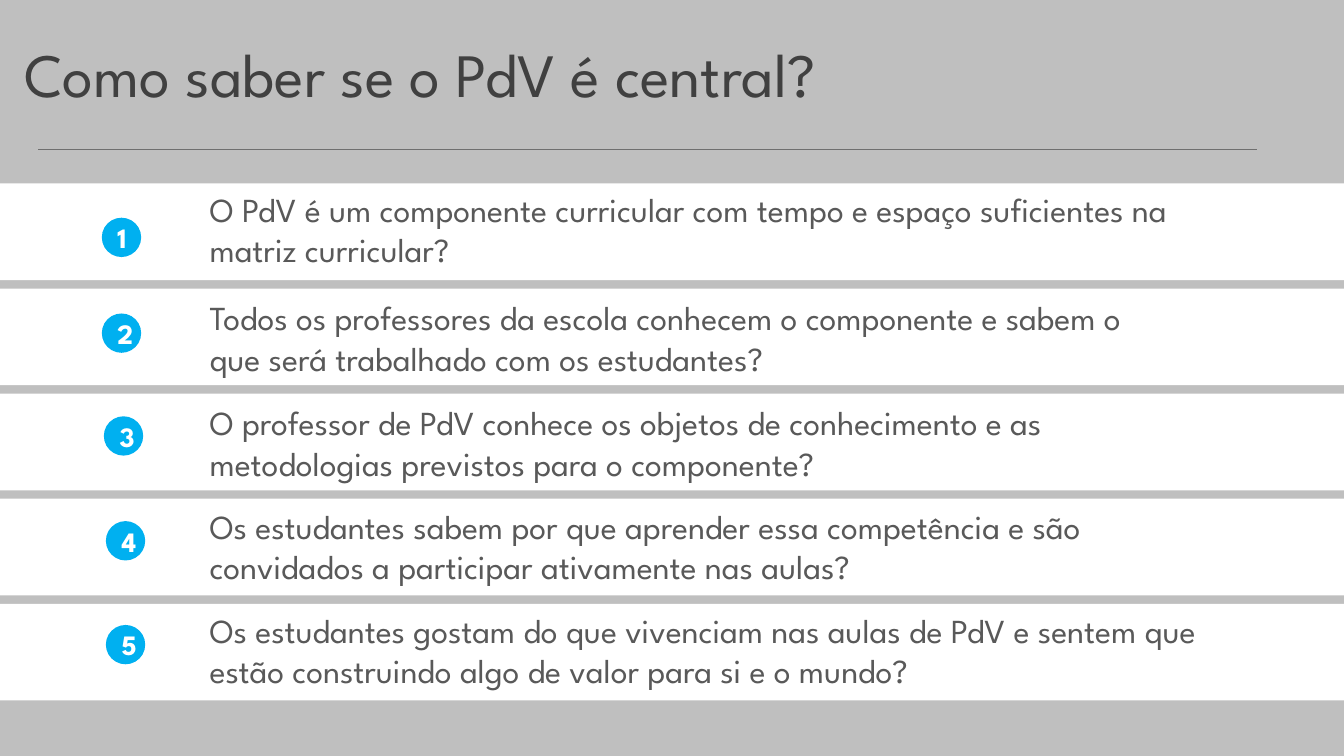
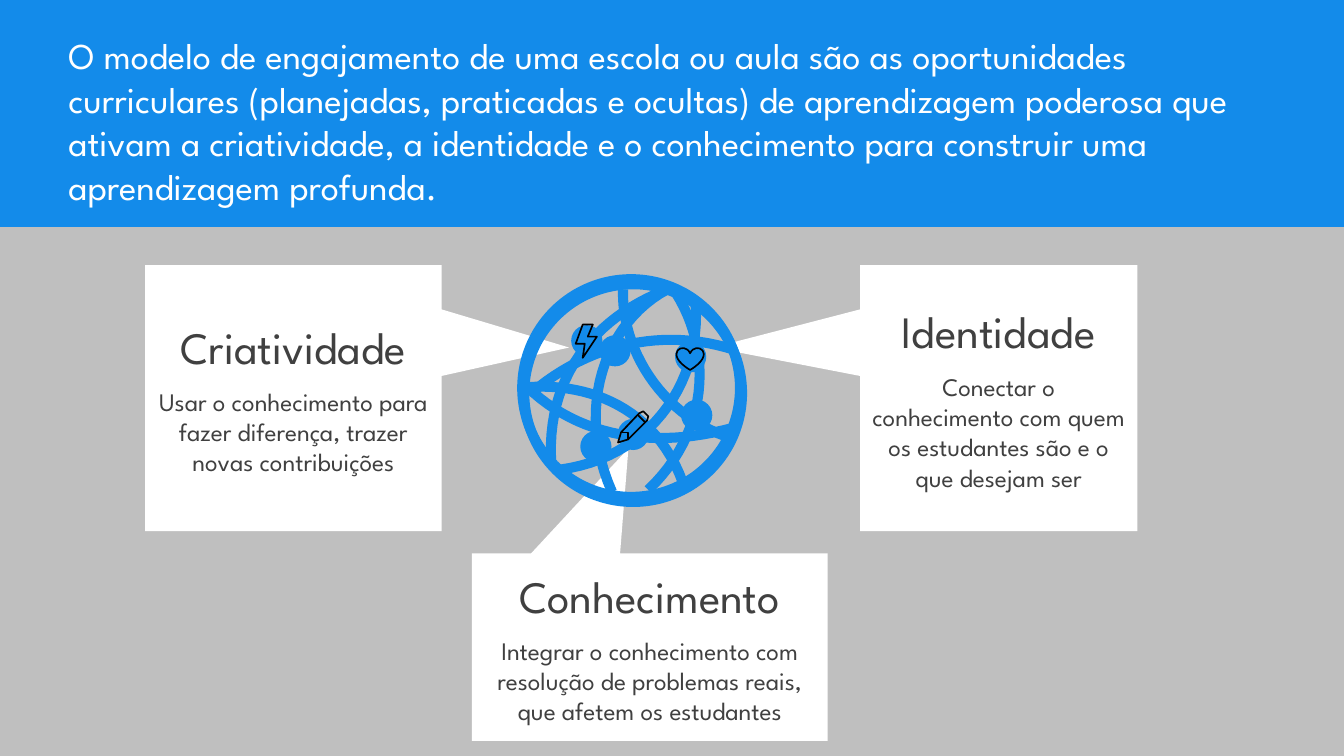
from dataclasses import dataclass

from pptx import Presentation
from pptx.dml.color import RGBColor
from pptx.enum.shapes import MSO_CONNECTOR, MSO_SHAPE
from pptx.enum.text import MSO_ANCHOR, PP_ALIGN
from pptx.oxml.ns import qn
from pptx.util import Inches, Pt
from lxml import etree

RECT, OVAL, HEART = MSO_SHAPE.RECTANGLE, MSO_SHAPE.OVAL, MSO_SHAPE.HEART
CALLOUT = MSO_SHAPE.RECTANGULAR_CALLOUT
STRAIGHT = MSO_CONNECTOR.STRAIGHT
MIDDLE, TOP = MSO_ANCHOR.MIDDLE, MSO_ANCHOR.TOP
CENTER, LEFT = PP_ALIGN.CENTER, PP_ALIGN.LEFT


@dataclass(frozen=True)
class Theme:
    font: str = "League Spartan"
    backdrop: str = "BFBFBF"
    panel: str = "FFFFFF"
    accent: str = "138BEA"
    badge: str = "00B0F0"
    rule: str = "6F6F6F"
    heading: str = "404040"
    body: str = "595959"
    icon: str = "000000"
    title_size: int = 44
    callout_title_size: int = 32
    statement_size: int = 26
    question_size: int = 24
    badge_size: int = 20
    callout_body_size: int = 18
    callout_gap: float = 9.5
    globe_line: float = 7.2
    icon_line: float = 1.2


THEME = Theme()
SLIDE_WIDTH, SLIDE_HEIGHT = 13.33, 7.5

# Question, text box (top, width), badge (left, top)
QUESTIONS = [
    ("O PdV é um componente curricular com tempo e espaço suficientes na "
     "matriz curricular?", (1.82, 9.75), (1.01, 2.16)),
    ("Todos os professores da escola conhecem o componente e sabem o que "
     "será trabalhado com os estudantes?", (2.9, 9.75), (1.01, 3.11)),
    ("O professor de PdV conhece os objetos de conhecimento e as "
     "metodologias previstos para o componente?", (3.94, 9.75), (1.03, 4.13)),
    ("Os estudantes sabem por que aprender essa competência e são "
     "convidados a participar ativamente nas aulas?", (4.97, 9.93), (1.05, 5.17)),
    ("Os estudantes gostam do que vivenciam nas aulas de PdV e sentem que "
     "estão construindo algo de valor para si e o mundo?",
     (6, 10.71), (1.05, 6.2)),
]

STATEMENT = (
    "O modelo de engajamento de uma escola ou aula são as oportunidades "
    "curriculares (planejadas, praticadas e ocultas) de aprendizagem poderosa "
    "que ativam a criatividade, a identidade e o conhecimento para construir "
    "uma aprendizagem profunda.")

# Heading, explanation, box, pointer tip
DIMENSIONS = [
    ("Identidade", "Conectar o conhecimento com quem os estudantes são e o "
     "que desejam ser", (8.53, 2.63, 2.75, 2.64), (-1.03, -0.19)),
    ("Criatividade", "Usar o conhecimento para fazer diferença, trazer novas "
     "contribuições", (1.44, 2.63, 2.94, 2.64), (0.93, -0.19)),
    ("Conhecimento", "Integrar o conhecimento com resolução de problemas "
     "reais, que afetem os estudantes", (4.68, 5.49, 3.53, 1.86), (-0.06, -1.06)),
]

# Globe parts, in inches from the globe's top left corner
GLOBE_RINGS = [(0, 0), (0.02, 0.05)]
GLOBE_DIAMETER, RING_WIDTH, NODE_DIAMETER = 2.26, 0.1, 0.31
GLOBE_ARCS = [
    [(1.05, 0.15), (1.03, 0.73), (1.42, 1.38), (2.07, 1.61)],
    [(1.47, 0.16), (0.77, 0.43), (0.27, 1.03), (0.34, 1.9)],
    [(0.09, 1.11), (0.62, 1.63), (1.37, 1.73), (2.12, 1.53)],
    [(1.77, 0.31), (1.82, 1.13), (1.27, 1.83), (0.42, 1.94)],
    [(0.94, 2.16), (0.57, 1.33), (0.87, 0.48), (1.49, 0.15)],
    [(1.57, 0.18), (1.95, 0.78), (1.89, 1.58), (1.3, 2.14)],
    [(0.12, 1.12), (0.72, 1.08), (1.37, 1.33), (1.64, 2.06)],
    [(0.14, 1.18), (0.72, 0.68), (1.47, 0.53), (2.15, 0.75)],
]
GLOBE_NODES = [(0.69, 0.66), (1.72, 0.82), (1.15, 1.59),
               (0.97, 0.76), (0.78, 1.71), (1.78, 1.4)]
HEART_BOX = (1.58, 0.73, 0.27, 0.22)
BOLT = [(0.65, 0.5), (0.75, 0.5), (0.7, 0.62), (0.79, 0.62),
        (0.65, 0.83), (0.67, 0.69), (0.58, 0.69)]
PENCIL = [(1, 1.67), (1.03, 1.57), (1.21, 1.38), (1.25, 1.36),
          (1.3, 1.41), (1.29, 1.45), (1.1, 1.64)]
PENCIL_DETAILS = [[(1.2, 1.4), (1.27, 1.47)],
                  [(1.03, 1.57), (1.1, 1.57), (1.1, 1.64)]]


def paint(shape, fill=None, line=None, width=1.0):
    shape.shadow.inherit = False
    if fill:
        shape.fill.solid()
        shape.fill.fore_color.rgb = RGBColor.from_string(fill)
    else:
        shape.fill.background()
    if line:
        shape.line.color.rgb = RGBColor.from_string(line)
        shape.line.width = Pt(width)
    else:
        shape.line.fill.background()


def add_figure(slide, preset, box, **colours):
    figure = slide.shapes.add_shape(preset, *map(Inches, box))
    paint(figure, **colours)
    return figure


def add_path(slide, origin, points, closed=False, **colours):
    """Draw points, given in inches from origin, as one outline."""
    start, *others = [(Inches(origin[0] + x), Inches(origin[1] + y))
                      for x, y in points]
    builder = slide.shapes.build_freeform(*start)
    builder.add_line_segments(others, close=closed)
    paint(builder.convert_to_shape(), **colours)


def write(shape, lines, anchor=TOP, align=LEFT, gap=0):
    """Fill a shape with (text, size, colour, bold) lines, gap points apart."""
    frame = shape.text_frame
    for name, value in {"word_wrap": True, "vertical_anchor": anchor}.items():
        setattr(frame, name, value)
    for index, (text, size, colour, bold) in enumerate(lines):
        paragraph = frame.add_paragraph() if index else frame.paragraphs[0]
        paragraph.alignment = align
        if index:
            paragraph.space_before = Pt(gap)
        run = paragraph.add_run()
        run.text = text
        font_format = {"name": THEME.font, "size": Pt(size), "bold": bold}
        for name, value in font_format.items():
            setattr(run.font, name, value)
        run.font.color.rgb = RGBColor.from_string(colour)


def add_text(slide, box, text, size, colour):
    write(slide.shapes.add_textbox(*map(Inches, box)),
          [(text, size, colour, False)])


def add_rule(slide, left, right, top):
    rule = slide.shapes.add_connector(
        STRAIGHT, *map(Inches, (left, top, right, top)))
    rule.line.color.rgb = RGBColor.from_string(THEME.rule)
    rule.line.width = Pt(0.75)
    etree.SubElement(rule._element.spPr, qn("a:effectLst"))


def add_slide(deck):
    slide = deck.slides.add_slide(deck.slide_layouts[6])
    slide.background.fill.solid()
    slide.background.fill.fore_color.rgb = RGBColor.from_string(THEME.backdrop)
    return slide


def add_question(slide, band, number, question, text_place, badge_place):
    add_figure(slide, RECT, band, fill=THEME.panel)
    text_top, text_width = text_place
    add_text(slide, (band[0] + 1.98, text_top, text_width, 0.91), question,
             THEME.question_size, THEME.body)
    badge = add_figure(slide, OVAL, (*badge_place, 0.39, 0.39), fill=THEME.badge)
    write(badge, [(str(number), THEME.badge_size, THEME.panel, True)],
          MIDDLE, CENTER)


def build_questions(deck):
    slide = add_slide(deck)
    add_text(slide, (0.14, 0.31, 12.9, 0.84), "Como saber se o PdV é central?",
             THEME.title_size, THEME.heading)
    add_rule(slide, 0.38, 12.47, 1.48)
    first_top, last_top = 1.82, 5.99
    pitch = (last_top - first_top) / (len(QUESTIONS) - 1)
    for index, question in enumerate(QUESTIONS):
        band = (0, first_top + index * pitch, SLIDE_WIDTH, 0.96)
        add_question(slide, band, index + 1, *question)


def add_dimension(slide, heading, explanation, box, tip):
    callout = add_figure(slide, CALLOUT, box, fill=THEME.panel)
    for index, offset in enumerate(tip):
        callout.adjustments[index] = offset
    write(callout,
          [(heading, THEME.callout_title_size, THEME.heading, False),
           (explanation, THEME.callout_body_size, THEME.heading, False)],
          MIDDLE, CENTER, THEME.callout_gap)


def curve_points(controls, steps=24):
    """Sample a cubic Bézier curve."""
    points = []
    for step in range(steps + 1):
        t = step / steps
        weights = ((1 - t) ** 3, 3 * t * (1 - t) ** 2, 3 * t * t * (1 - t), t ** 3)
        points.append(tuple(sum(w * c[axis] for w, c in zip(weights, controls))
                            for axis in (0, 1)))
    return points


def add_globe(slide, left, top):
    strokes = {"line": THEME.accent, "width": THEME.globe_line}
    inner = GLOBE_DIAMETER - RING_WIDTH
    for x, y in GLOBE_RINGS:
        add_figure(slide, OVAL, (left + x + RING_WIDTH / 2,
                                 top + y + RING_WIDTH / 2, inner, inner), **strokes)
    for arc in GLOBE_ARCS:
        add_path(slide, (left, top), curve_points(arc), **strokes)
    radius = NODE_DIAMETER / 2
    for x, y in GLOBE_NODES:
        add_figure(slide, OVAL, (left + x - radius, top + y - radius,
                                 NODE_DIAMETER, NODE_DIAMETER), fill=THEME.accent)


def add_globe_icons(slide, left, top):
    strokes = {"line": THEME.icon, "width": THEME.icon_line}
    x, y, width, height = HEART_BOX
    add_figure(slide, HEART, (left + x, top + y, width, height), **strokes)
    for outline in (BOLT, PENCIL):
        add_path(slide, (left, top), outline, closed=True, **strokes)
    for detail in PENCIL_DETAILS:
        add_path(slide, (left, top), detail, **strokes)


def build_engagement(deck):
    slide = add_slide(deck)
    add_figure(slide, RECT, (0, 0, SLIDE_WIDTH, 2.24),
               fill=THEME.accent, line=THEME.accent, width=1.25)
    for dimension in DIMENSIONS:
        add_dimension(slide, *dimension)
    add_text(slide, (0.58, 0.28, 12.25, 1.85), STATEMENT,
             THEME.statement_size, THEME.panel)
    for add_part in (add_globe, add_globe_icons):
        add_part(slide, 5.13, 2.72)


def main():
    deck = Presentation()
    deck.slide_width, deck.slide_height = Inches(SLIDE_WIDTH), Inches(SLIDE_HEIGHT)
    build_questions(deck)
    build_engagement(deck)
    deck.save("out.pptx")


if __name__ == "__main__":
    main()
